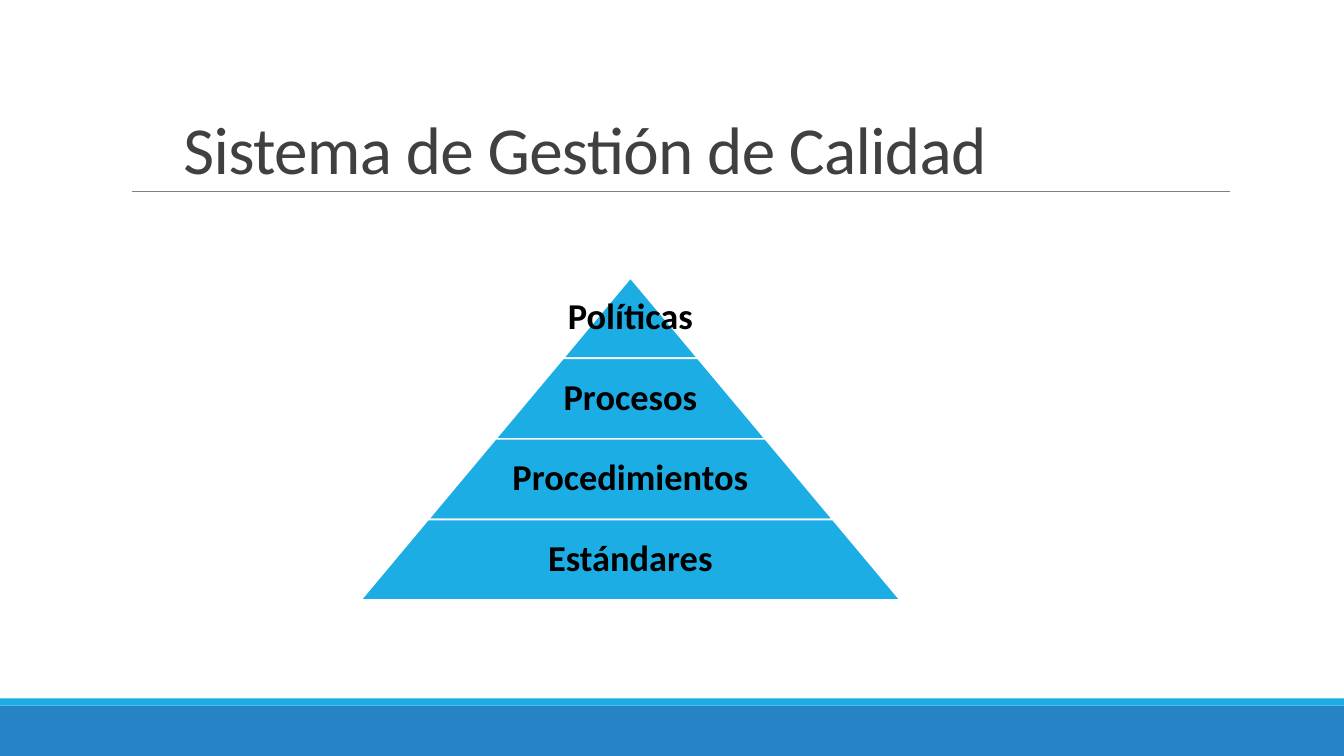
from pptx import Presentation
from pptx.dml.color import RGBColor
from pptx.enum.shapes import MSO_CONNECTOR, MSO_SHAPE
from pptx.enum.text import MSO_ANCHOR, MSO_AUTO_SIZE, PP_ALIGN
from pptx.oxml.ns import qn
from pptx.util import Cm, Pt
from lxml.etree import SubElement

BLUE = RGBColor(0x26, 0x83, 0xC6)
CYAN = RGBColor(0x1C, 0xAD, 0xE4)
GRAY = RGBColor(0x80, 0x80, 0x80)
DARK = RGBColor(0x40, 0x40, 0x40)
BLACK = RGBColor(0, 0, 0)
WHITE = RGBColor(0xFF, 0xFF, 0xFF)
FONT = "Calibri"
SLIDE_W, SLIDE_H = 33.87, 19.05


def add_filled(shapes, kind, left, top, width, height, color):
    shape = shapes.add_shape(kind, Cm(left), Cm(top), Cm(width), Cm(height))
    shape.shadow.inherit = False
    shape.fill.solid()
    shape.fill.fore_color.rgb = color
    shape.line.fill.background()
    return shape


def add_styled_run(paragraph, text, size, color, bold=False):
    run = paragraph.add_run()
    run.text = text
    run.font.name = FONT
    run.font.size = Pt(size)
    run.font.bold = bold
    run.font.color.rgb = color
    return run


prs = Presentation()
prs.slide_width, prs.slide_height = Cm(SLIDE_W), Cm(SLIDE_H)
slide = prs.slides.add_slide(prs.slide_layouts[5])

# Footer bands
add_filled(slide.shapes, MSO_SHAPE.RECTANGLE, 0, 17.78, SLIDE_W, 1.27, BLUE)
add_filled(slide.shapes, MSO_SHAPE.RECTANGLE, 0, 17.6, SLIDE_W, 0.18, CYAN)

# Rule under the title
rule = slide.shapes.add_connector(
    MSO_CONNECTOR.STRAIGHT, Cm(3.32), Cm(4.83), Cm(31), Cm(4.83))
rule.line.color.rgb = GRAY
rule.line.width = Pt(0.5)
SubElement(rule._element.spPr, qn("a:effectLst"))

# Title
title = slide.shapes.title
title.left, title.top, title.width, title.height = Cm(4.37), Cm(0), Cm(27.84), Cm(4.88)
heading = title.text_frame
heading.word_wrap = True
heading.auto_size = MSO_AUTO_SIZE.NONE
heading.vertical_anchor = MSO_ANCHOR.BOTTOM
heading_line = heading.paragraphs[0]
heading_line.alignment = PP_ALIGN.LEFT
heading_line.line_spacing = 0.85
heading_run = add_styled_run(heading_line, "Sistema de Gestión de Calidad", 48, DARK)
heading_run._r.get_or_add_rPr().set("spc", "-50")

# Pyramid: each level is one step wider than the level above
LEVELS = ["Políticas", "Procesos", "Procedimientos", "Estándares"]
CENTER, PYRAMID_TOP = 15.89, 7.0
LEVEL_H, STEP_W = 2.03, 3.4
pyramid = slide.shapes.add_group_shape()
for i, name in enumerate(LEVELS):
    width = STEP_W * (i + 1)
    top = PYRAMID_TOP + LEVEL_H * i
    level = add_filled(pyramid.shapes, MSO_SHAPE.TRAPEZOID,
                       CENTER - width / 2, top, width, LEVEL_H, CYAN)
    level.adjustments[0] = STEP_W / 2 / LEVEL_H
    level.line.color.rgb = WHITE
    level.line.width = Pt(1.25)

    label_w = max(STEP_W, 0.65 * width)
    label = pyramid.shapes.add_textbox(
        Cm(CENTER - label_w / 2), Cm(top), Cm(label_w), Cm(LEVEL_H)).text_frame
    label.word_wrap = True
    label.vertical_anchor = MSO_ANCHOR.MIDDLE
    label.margin_left = label.margin_right = Cm(0.1)
    label.margin_top = label.margin_bottom = Cm(0.1)
    label_line = label.paragraphs[0]
    label_line.alignment = PP_ALIGN.CENTER
    label_line.line_spacing = 0.9
    add_styled_run(label_line, name, 26, BLACK, bold=True)

prs.save("out.pptx")
